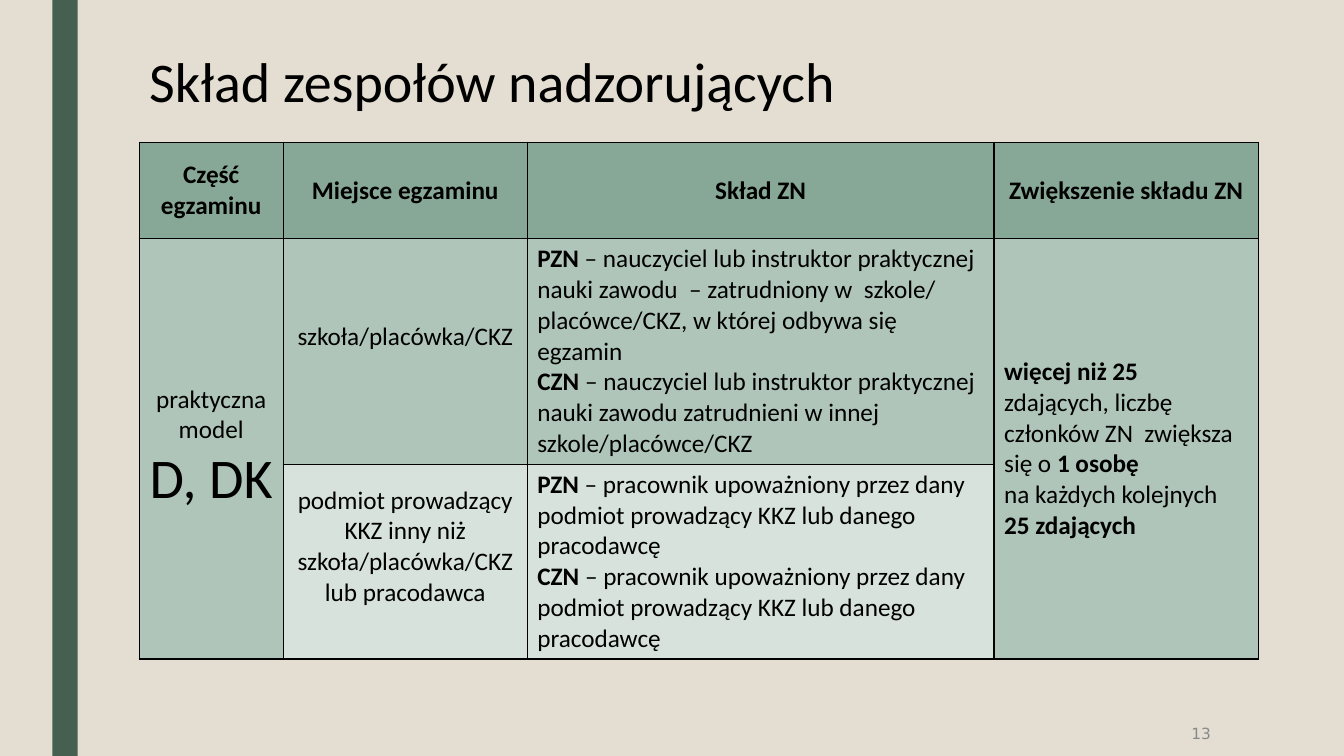
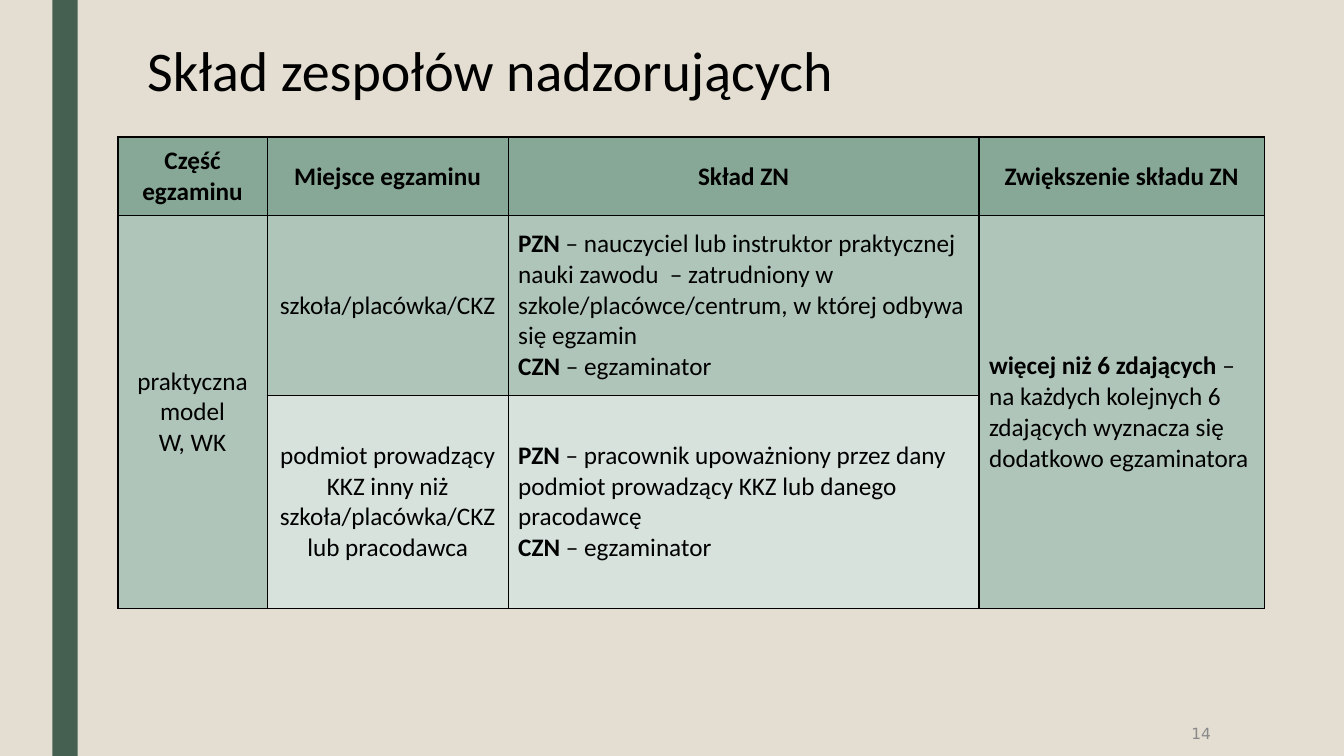
from dataclasses import dataclass
from typing import NamedTuple

from lxml import etree
from pptx import Presentation
from pptx.dml.color import RGBColor
from pptx.enum.shapes import MSO_SHAPE
from pptx.enum.text import MSO_ANCHOR, MSO_AUTO_SIZE, PP_ALIGN
from pptx.oxml.ns import qn
from pptx.util import Inches, Pt

RECTANGLE = MSO_SHAPE.RECTANGLE
TOP, MIDDLE = MSO_ANCHOR.TOP, MSO_ANCHOR.MIDDLE
LEFT, CENTER, RIGHT = PP_ALIGN.LEFT, PP_ALIGN.CENTER, PP_ALIGN.RIGHT
NO_AUTOFIT = MSO_AUTO_SIZE.NONE

# Shared look
SAND = RGBColor(0xE3, 0xDE, 0xD1)
FOREST = RGBColor(0x45, 0x5F, 0x51)
HEADER_GREEN = RGBColor(0x87, 0xA8, 0x96)
MID_GREEN = RGBColor(0xAF, 0xC5, 0xB9)
PALE_GREEN = RGBColor(0xD7, 0xE2, 0xDC)
BLACK = RGBColor(0, 0, 0)
GRAY = RGBColor(0x89, 0x89, 0x89)
ROW_FILLS = (HEADER_GREEN, MID_GREEN, PALE_GREEN)

SLIDE_W, SLIDE_H = 13.33, 7.5
FONT, NUMBER_FONT = "Calibri", "DejaVu Sans"
TITLE_SIZE, TABLE_SIZE, NUMBER_SIZE = 40, 18, 11
MERGED_COLUMNS = (0, 3)
TITLE_ONLY_LAYOUT = 5


class Span(NamedTuple):
    text: str
    bold: bool = False
    size: int = TABLE_SIZE
    break_after: bool = False


class CellText(NamedTuple):
    paragraphs: list[list[Span]]
    align: int = CENTER
    bottom: float = 0.05


@dataclass
class TeamSlide:
    number: int
    title_at: tuple[float, float]
    table_at: tuple[float, float]
    columns: list[float]
    rows: list[float]
    exam_part: CellText
    school: CellText
    school_team: CellText
    other_site: CellText
    other_team: CellText
    increase: CellText


# Content helpers
def centered(*lines: str, bold: bool = False, bottom: float = 0.05) -> CellText:
    return CellText([[Span(line, bold)] for line in lines], bottom=bottom)


def team(chair: str, member: str) -> CellText:
    return CellText([[Span("PZN", True), Span(f" – {chair}")],
                     [Span("CZN", True), Span(f" – {member}")]], LEFT)


def other_site(bottom: float = 0.05) -> CellText:
    return centered("podmiot prowadzący KKZ inny niż szkoła/placówka/CKZ",
                    "lub pracodawca", bottom=bottom)


# Content
TITLE = "Skład zespołów nadzorujących"
HEADINGS = [centered(heading, bold=True) for heading in (
    "Część egzaminu", "Miejsce egzaminu", "Skład ZN", "Zwiększenie składu ZN")]
SCHOOL = "szkoła/placówka/CKZ"
TEACHER = "nauczyciel lub instruktor praktycznej nauki zawodu"
EMPLOYEE = ("pracownik upoważniony przez dany podmiot prowadzący KKZ "
            "lub danego pracodawcę")
EXAMINER = "egzaminator"
RAISED = 0.35  # bottom inset that lifts the text by half a line

SLIDES = [
    TeamSlide(
        number=13, title_at=(1.38, 0.49), table_at=(1.38, 1.41),
        columns=[1.43, 2.42, 4.63, 2.62], rows=[0.96, 2.23, 1.93],
        exam_part=CellText([[Span("praktyczna")], [Span("model")],
                            [Span("D, DK", size=40)]]),
        school=centered(SCHOOL, bottom=RAISED),
        school_team=team(
            f"{TEACHER}  – zatrudniony w  szkole/ placówce/CKZ, "
            "w której odbywa się egzamin",
            f"{TEACHER} zatrudnieni w innej szkole/placówce/CKZ"),
        other_site=other_site(RAISED),
        other_team=team(EMPLOYEE, EMPLOYEE),
        increase=CellText([[
            Span("więcej niż 25 ", True),
            Span("zdających, liczbę członków ZN  zwiększa się o "),
            Span("1 osobę ", True, break_after=True),
            Span("na każdych kolejnych "),
            Span("25 zdających", True)]], LEFT)),
    TeamSlide(
        number=14, title_at=(1.36, 0.38), table_at=(1.17, 1.36),
        columns=[1.48, 2.39, 4.67, 2.83], rows=[0.78, 1.78, 2.12],
        exam_part=centered("praktyczna", "model", "W, WK"),
        school=centered(SCHOOL),
        school_team=team(
            f"{TEACHER}  – zatrudniony w  szkole/placówce/centrum, "
            "w której odbywa się egzamin", EXAMINER),
        other_site=other_site(),
        other_team=team(EMPLOYEE, EXAMINER),
        increase=CellText([[
            Span("więcej niż 6 zdających ", True),
            Span("– na każdych kolejnych 6 zdających wyznacza się "
                 "dodatkowo egzaminatora")]], LEFT)),
]


# Drawing
def add_run(paragraph, text: str, size: int, color: RGBColor = BLACK,
            font: str = FONT, bold: bool = False) -> None:
    run = paragraph.add_run()
    run.text = text
    run.font.name, run.font.size, run.font.bold = font, Pt(size), bold
    run.font.color.rgb = color


def style_master(master, first_slide) -> None:
    """Give every slide the sand background and the green band."""
    master.background.fill.solid()
    master.background.fill.fore_color.rgb = SAND
    band = first_slide.shapes.add_shape(
        RECTANGLE, Inches(0.52), 0, Inches(0.25), Inches(SLIDE_H))
    band.shadow.inherit = False
    band.fill.solid()
    band.fill.fore_color.rgb = FOREST
    band.line.fill.background()
    master.shapes.element.insert(2, band.element)


def fill_title(slide, left: float, top: float) -> None:
    title = slide.shapes.title
    title.left, title.top = Inches(left), Inches(top)
    title.width, title.height = Inches(9.88), Inches(0.55)
    frame = title.text_frame
    frame.word_wrap, frame.auto_size = True, NO_AUTOFIT
    frame.vertical_anchor = TOP
    paragraph = frame.paragraphs[0]
    paragraph.alignment, paragraph.line_spacing = LEFT, 0.89
    add_run(paragraph, TITLE, TITLE_SIZE)


def add_borders(cell) -> None:
    properties = cell._tc.get_or_add_tcPr()
    for side in ("a:lnL", "a:lnR", "a:lnT", "a:lnB"):
        line = etree.SubElement(properties, qn(side), w=str(Pt(1)))
        solid = etree.SubElement(line, qn("a:solidFill"))
        etree.SubElement(solid, qn("a:srgbClr"), val=str(BLACK))


def write_cell(cell, content: CellText) -> None:
    cell.vertical_anchor = MIDDLE
    cell.margin_left = cell.margin_right = Inches(0.1)
    cell.margin_top, cell.margin_bottom = Inches(0.05), Inches(content.bottom)
    frame = cell.text_frame
    for index, spans in enumerate(content.paragraphs):
        paragraph = frame.add_paragraph() if index else frame.paragraphs[0]
        paragraph.alignment = content.align
        for span in spans:
            add_run(paragraph, span.text, span.size, bold=span.bold)
            if span.break_after:
                paragraph.add_line_break()


def add_team_table(slide, page: TeamSlide) -> None:
    left, top = page.table_at
    table = slide.shapes.add_table(
        len(page.rows), len(page.columns), Inches(left), Inches(top),
        Inches(sum(page.columns)), Inches(sum(page.rows))).table
    table.first_row = table.horz_banding = False
    for column, width in zip(table.columns, page.columns):
        column.width = Inches(width)
    for row, height, color in zip(table.rows, page.rows, ROW_FILLS):
        row.height = Inches(height)
        for cell in row.cells:
            add_borders(cell)
            cell.fill.solid()
            cell.fill.fore_color.rgb = color
    for column in MERGED_COLUMNS:
        table.cell(1, column).merge(table.cell(2, column))

    contents = (
        HEADINGS,
        [page.exam_part, page.school, page.school_team, page.increase],
        [None, page.other_site, page.other_team, None])
    for row, row_contents in zip(table.rows, contents):
        for cell, content in zip(row.cells, row_contents):
            if content:
                write_cell(cell, content)


def add_page_number(slide, number: int) -> None:
    box = slide.shapes.add_textbox(
        Inches(10.36), Inches(7.06), Inches(1.75), Inches(0.44))
    frame = box.text_frame
    frame.word_wrap, frame.vertical_anchor = True, MIDDLE
    paragraph = frame.paragraphs[0]
    paragraph.alignment = RIGHT
    add_run(paragraph, str(number), NUMBER_SIZE, GRAY, NUMBER_FONT)


def main() -> None:
    deck = Presentation()
    deck.slide_width, deck.slide_height = Inches(SLIDE_W), Inches(SLIDE_H)
    for page in SLIDES:
        slide = deck.slides.add_slide(deck.slide_layouts[TITLE_ONLY_LAYOUT])
        fill_title(slide, *page.title_at)
        add_team_table(slide, page)
        add_page_number(slide, page.number)
    style_master(deck.slide_master, deck.slides[0])
    deck.save("out.pptx")


if __name__ == "__main__":
    main()
